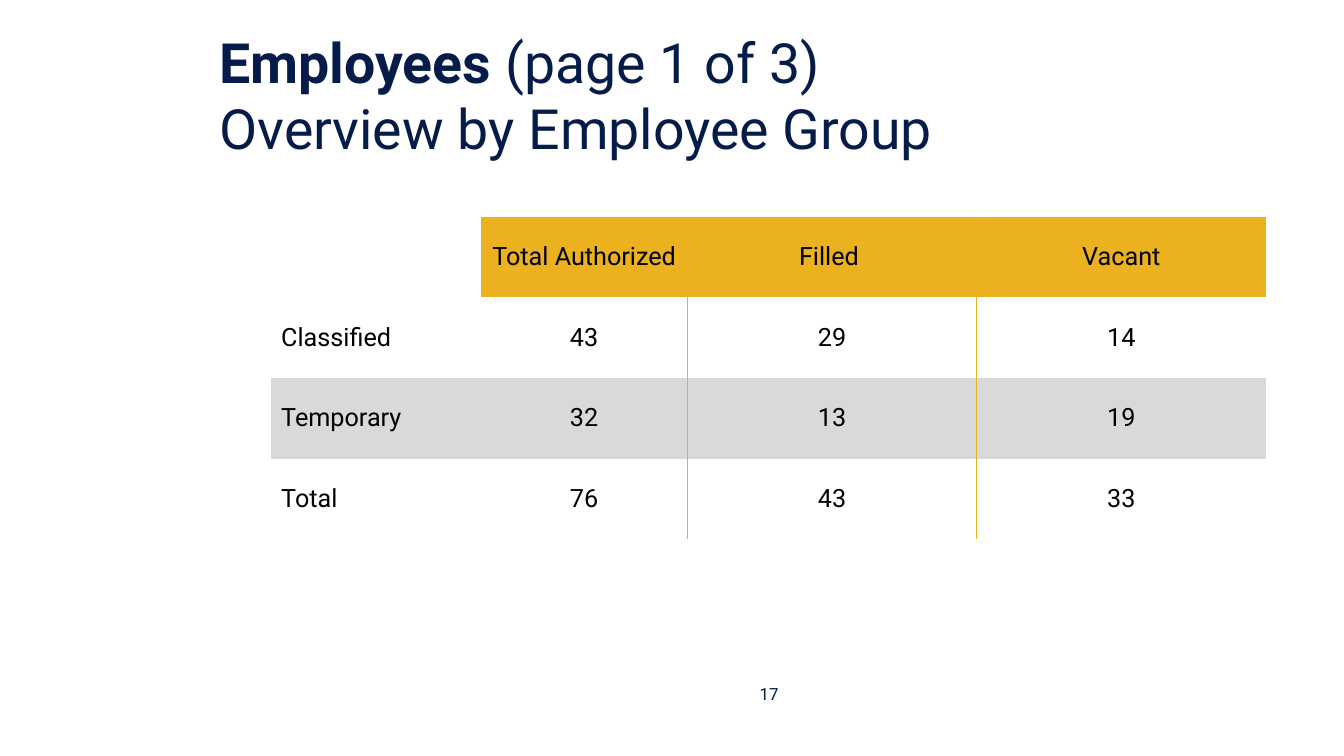
from dataclasses import dataclass

from lxml import etree
from pptx import Presentation
from pptx import util as u
from pptx.dml import color
from pptx.enum import text
from pptx.oxml import ns

FONT = "Roboto"
COLORS = {"navy": "051C4B", "gold": "EBB11E", "grey": "D9D9D9",
          "white": "FFFFFF", "black": "000000"}
NO_STYLE = "{2D5ABB26-0587-4C30-8999-92F81FD0307C}"


@dataclass
class Box:
    left: float
    top: float
    width: float
    height: float


@dataclass
class Row:
    values: tuple
    fill: str


TITLE = Box(149.76, 22.32, 799.2, 90)
NUMBER = Box(524.88, 480.96, 48.96, 28.8)
TABLE = Box(193.68, 154.8, 710.64, 230.4)
COLUMNS = (149.76, 147.6, 206.64, 206.64)
RULED_SIDES = {1: ("lnR",), 2: ("lnL", "lnR"), 3: ("lnL",)}
ROWS = (
    Row(("", "Total Authorized", "Filled ", "Vacant"), "gold"),
    Row(("Classified", "43", "29", "14"), "white"),
    Row(("Temporary", "32", "13", "19"), "grey"),
    Row(("Total", "76", "43", "33"), "white"),
)


def rgb(name: str) -> color.RGBColor:
    return color.RGBColor.from_string(COLORS[name])


def add_run(p, content: str, *, size: float, fill: str, bold: bool = False) -> None:
    r = p.add_run()
    r.text = content
    r.font.name = FONT
    r.font.size = u.Pt(size)
    r.font.bold = bold
    r.font.color.rgb = rgb(fill)


def add_box(s, box: Box):
    sp = s.shapes.add_textbox(u.Pt(box.left), u.Pt(box.top),
                              u.Pt(box.width), u.Pt(box.height))
    tf = sp.text_frame
    tf.word_wrap = True
    tf.vertical_anchor = text.MSO_ANCHOR.MIDDLE
    return tf.paragraphs[0]


def add_border(cell, side: str, fill: str, width: float = 1) -> None:
    ln = etree.SubElement(cell._tc.get_or_add_tcPr(), ns.qn(f"a:{side}"),
                          w=str(u.Pt(width)))
    solid = etree.SubElement(ln, ns.qn("a:solidFill"))
    etree.SubElement(solid, ns.qn("a:srgbClr"), val=COLORS[fill])


def fill_cell(cell, content: str, col: int, fill: str) -> None:
    for side in RULED_SIDES.get(col, ()):
        add_border(cell, side, "gold")
    cell.fill.solid()
    cell.fill.fore_color.rgb = rgb(fill)
    cell.vertical_anchor = text.MSO_ANCHOR.MIDDLE
    if content:
        p = cell.text_frame.paragraphs[0]
        p.alignment = text.PP_ALIGN.CENTER if col else text.PP_ALIGN.LEFT
        add_run(p, content, size=18, fill="black")


def add_employee_table(s) -> None:
    frame = s.shapes.add_table(len(ROWS), len(COLUMNS), u.Pt(TABLE.left),
                               u.Pt(TABLE.top), u.Pt(TABLE.width), u.Pt(TABLE.height))
    table = frame.table
    table.first_row = table.horz_banding = False
    table._tbl.tblPr.find(ns.qn("a:tableStyleId")).text = NO_STYLE
    for column, width in zip(table.columns, COLUMNS):
        column.width = u.Pt(width)
    for i, row in enumerate(ROWS):
        table.rows[i].height = u.Pt(TABLE.height / len(ROWS))
        for j, value in enumerate(row.values):
            fill = row.fill if i or j else "white"
            fill_cell(table.cell(i, j), value, j, fill)


def main() -> None:
    prs = Presentation()
    prs.slide_width, prs.slide_height = u.Pt(960), u.Pt(540)
    s = prs.slides.add_slide(prs.slide_layouts[6])

    p = add_box(s, TITLE)
    add_run(p, "Employees ", size=39.6, fill="navy", bold=True)
    add_run(p, "(page 1 of 3)", size=39.6, fill="navy")
    p.add_line_break()
    add_run(p, "Overview by Employee Group", size=39.6, fill="navy")

    p = add_box(s, NUMBER)
    p.alignment = text.PP_ALIGN.CENTER
    add_run(p, "17", size=12, fill="navy")

    add_employee_table(s)
    prs.save("out.pptx")


if __name__ == "__main__":
    main()
